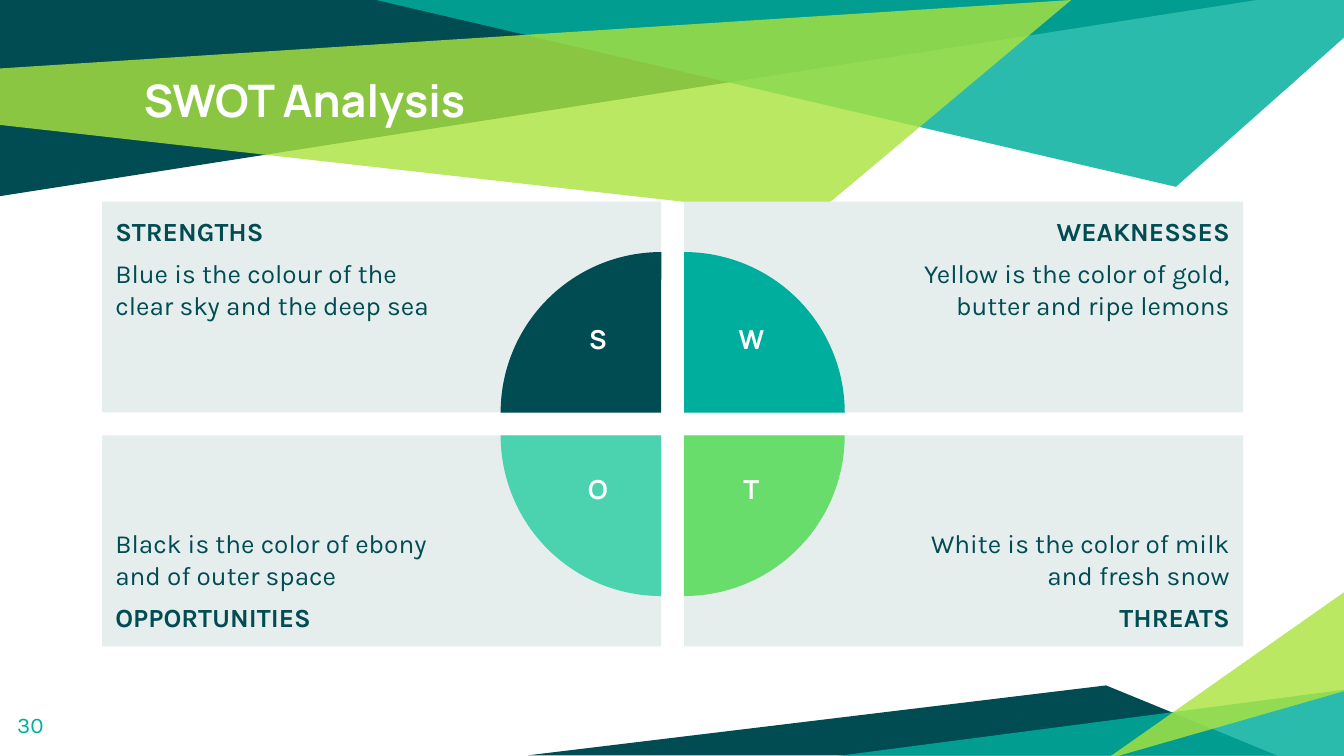
from lxml.etree import SubElement
from pptx import Presentation
from pptx.dml.color import RGBColor
from pptx.enum.shapes import MSO_SHAPE
from pptx.enum.text import MSO_ANCHOR, MSO_AUTO_SIZE, PP_ALIGN
from pptx.oxml.ns import qn
from pptx.util import Inches, Pt

# Content
TITLE = "SWOT Analysis"
PAGE_NUMBER = "30"
# letter, heading, body, column, row, pie colour, pie rotation
QUADRANTS = [
    ("S", "STRENGTHS", "Blue is the colour of the clear sky and the deep sea",
     0, 0, "004C52", 0),
    ("W", "WEAKNESSES", "Yellow is the color of gold, butter and ripe lemons",
     1, 0, "00AE9D", 90),
    ("O", "OPPORTUNITIES", "Black is the color of ebony and of outer space",
     0, 1, "4BD3B0", 270),
    ("T", "THREATS", "White is the color of milk and fresh snow",
     1, 1, "68DD6B", 180),
]

# Style
DARK, TEAL, LIME, PANEL, WHITE = "004C52", "00AE9D", "ABE33F", "E6EEED", "FFFFFF"
TITLE_FONT, BODY_FONT = "Manrope", "Karla"

# Background bands: corner points in inches, colour, opacity in percent
BANDS = [
    ([(0, 0), (0, 1.46), (9.35, 0)], DARK, 100),
    ([(2.8, 0), (8.75, 1.39), (10, 0.28), (10, 0)], TEAL, 83),
    ([(-0.01, 0.51), (0, 0.93), (6.05, 1.61), (7.97, 0)], LIME, 81),
    ([(3.93, 5.62), (9.5, 5.62), (8.23, 5.1)], DARK, 100),
    ([(10.02, 5.13), (10.02, 5.65), (6.04, 5.65)], TEAL, 83),
    ([(10.01, 5.14), (10.01, 4.4), (8.23, 5.65)], LIME, 81),
]

# Grid in inches
SLIDE_WIDTH = Inches(10)
SLIDE_HEIGHT = SLIDE_WIDTH * 9 // 16
GRID_LEFT, GRID_TOP = 0.76, 1.5
PANEL_WIDTH, PANEL_HEIGHT, GAP = 4.16, 1.57, 0.17
PIE_SIZE = 2.39
INSET, PIE_INSET = 0.1, 1.5
LETTER_WIDTH, LETTER_HEIGHT = 0.64, 0.44
# Letter centre relative to the panel's inner corner, by column and by row
LETTER_X, LETTER_Y = (-0.47, 0.5), (-0.49, 0.45)


def color(value):
    return RGBColor.from_string(value)


def paint(shape, fill, opacity=100):
    shape.shadow.inherit = False
    shape.fill.solid()
    shape.fill.fore_color.rgb = color(fill)
    shape.line.fill.background()
    if opacity < 100:
        fill_color = shape.element.spPr.find(qn("a:solidFill"))[0]
        SubElement(fill_color, qn("a:alpha")).set("val", str(opacity * 1000))


def set_frame(frame, left=INSET, right=INSET, vertical=INSET,
              anchor=MSO_ANCHOR.TOP):
    settings = {
        "margin_left": Inches(left), "margin_right": Inches(right),
        "margin_top": Inches(vertical), "margin_bottom": Inches(vertical),
        "vertical_anchor": anchor, "word_wrap": True,
        "auto_size": MSO_AUTO_SIZE.NONE,
    }
    for name, value in settings.items():
        setattr(frame, name, value)


def write(paragraph, text, size, font, text_color, bold=False,
          align=PP_ALIGN.LEFT):
    run = paragraph.add_run()
    run.text = text
    paragraph.alignment = align
    for name, value in {"size": Pt(size), "name": font, "bold": bold}.items():
        setattr(run.font, name, value)
    run.font.color.rgb = color(text_color)


def box(left, top, width, height):
    return [Inches(value) for value in (left, top, width, height)]


def add_bands(shapes):
    for points, fill, opacity in BANDS:
        corners = [(Inches(x), Inches(y)) for x, y in points]
        builder = shapes.build_freeform(*corners[0], scale=1.0)
        builder.add_line_segments(corners[1:], close=True)
        paint(builder.convert_to_shape(), fill, opacity)


def add_title(shapes):
    title = shapes.title
    title.left, title.top, title.width, title.height = box(0.97, 0.44, 8.06, 0.94)
    set_frame(title.text_frame)
    write(title.text_frame.paragraphs[0], TITLE, 24, TITLE_FONT, WHITE, True)
    # Bring the title in front of the bands
    title.element.getparent().append(title.element)


def add_page_number(shapes):
    frame = shapes.add_textbox(*box(0.03, 5.19, 0.6, 0.43)).text_frame
    set_frame(frame)
    write(frame.paragraphs[0], PAGE_NUMBER, 12, BODY_FONT, TEAL)


def add_panel(shapes, heading, body, column, row):
    panel = shapes.add_shape(MSO_SHAPE.RECTANGLE, *box(
        GRID_LEFT + column * (PANEL_WIDTH + GAP),
        GRID_TOP + row * (PANEL_HEIGHT + GAP), PANEL_WIDTH, PANEL_HEIGHT))
    paint(panel, PANEL)
    frame = panel.text_frame
    left, right = (PIE_INSET, INSET) if column else (INSET, PIE_INSET)
    set_frame(frame, left, right,
              anchor=MSO_ANCHOR.BOTTOM if row else MSO_ANCHOR.TOP)
    # The heading sits on the outer edge: first on top, last at the bottom
    lines = [(heading, True), (body, False)]
    if row:
        lines.reverse()
    align = PP_ALIGN.RIGHT if column else PP_ALIGN.LEFT
    first, second = frame.paragraphs[0], frame.add_paragraph()
    for paragraph, (text, bold) in zip((first, second), lines):
        write(paragraph, text, 14, BODY_FONT, DARK, bold, align)
    second.space_before = second.space_after = Pt(6)


def inner_corner(column, row):
    return (GRID_LEFT + PANEL_WIDTH + column * GAP,
            GRID_TOP + PANEL_HEIGHT + row * GAP)


def add_pie(shapes, column, row, fill, rotation):
    x, y = inner_corner(column, row)
    pie = shapes.add_shape(MSO_SHAPE.PIE, *box(
        x - PIE_SIZE / 2, y - PIE_SIZE / 2, PIE_SIZE, PIE_SIZE))
    # Quarter from 180 to 270 degrees
    pie.adjustments[0], pie.adjustments[1] = 108, 162
    pie.rotation = rotation
    paint(pie, fill)


def add_letter(shapes, letter, column, row):
    x, y = inner_corner(column, row)
    frame = shapes.add_textbox(*box(
        x + LETTER_X[column] - LETTER_WIDTH / 2,
        y + LETTER_Y[row] - LETTER_HEIGHT / 2,
        LETTER_WIDTH, LETTER_HEIGHT)).text_frame
    set_frame(frame, vertical=0.05)
    write(frame.paragraphs[0], letter, 14, TITLE_FONT, WHITE, True,
          PP_ALIGN.CENTER)


def main():
    presentation = Presentation()
    presentation.slide_width = SLIDE_WIDTH
    presentation.slide_height = SLIDE_HEIGHT
    slide = presentation.slides.add_slide(presentation.slide_layouts[5])
    shapes = slide.shapes

    add_bands(shapes)
    add_title(shapes)
    add_page_number(shapes)
    for _, heading, body, column, row, _, _ in QUADRANTS:
        add_panel(shapes, heading, body, column, row)
    for _, _, _, column, row, fill, rotation in QUADRANTS:
        add_pie(shapes, column, row, fill, rotation)
    for letter, _, _, column, row, _, _ in QUADRANTS:
        add_letter(shapes, letter, column, row)

    presentation.save("out.pptx")


if __name__ == "__main__":
    main()
